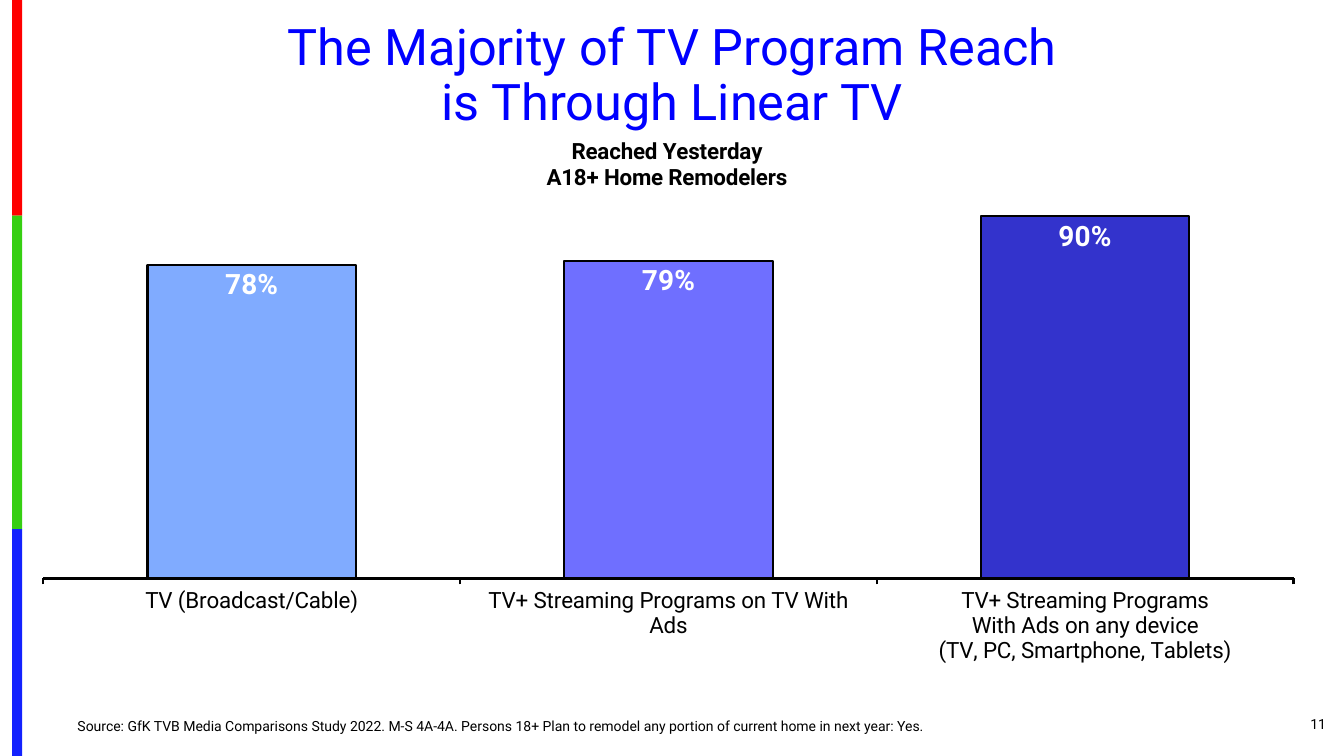
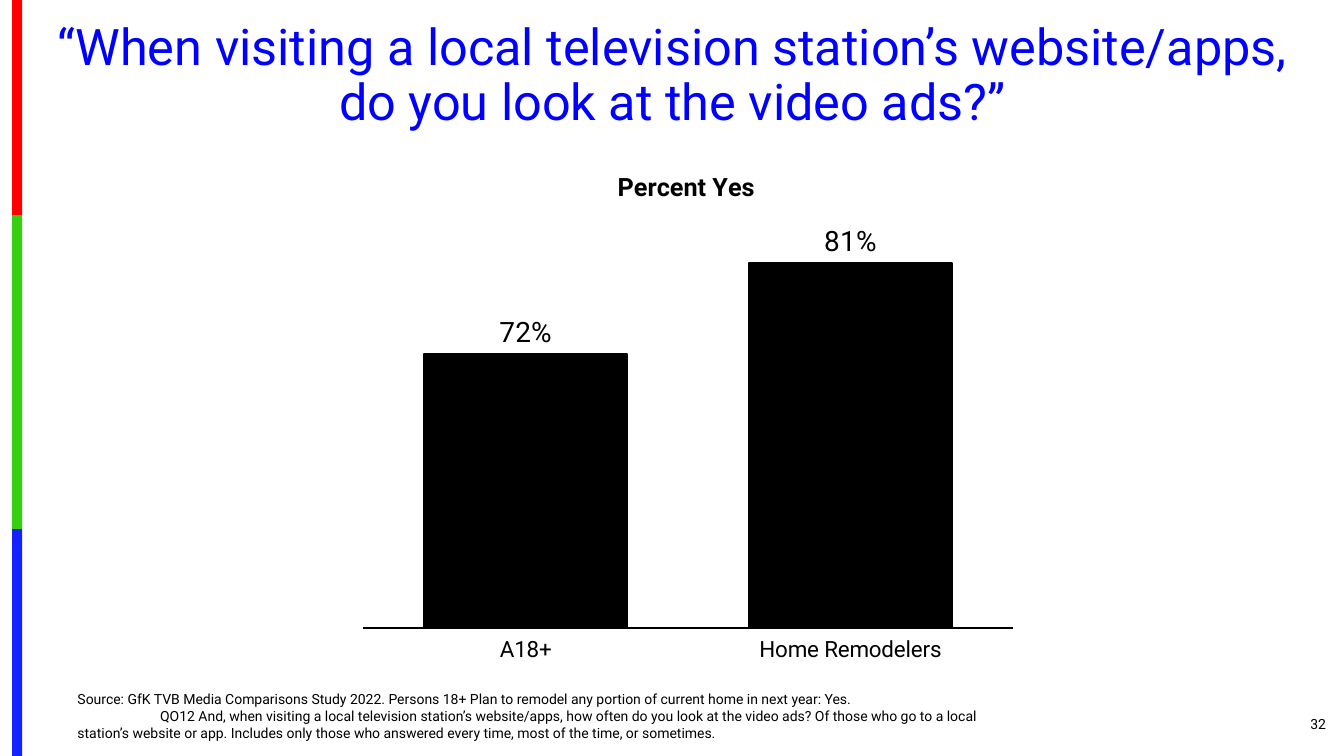
from dataclasses import dataclass

from lxml import etree
from pptx import Presentation
from pptx.chart.data import CategoryChartData
from pptx.dml.color import RGBColor
from pptx.enum.chart import XL_CHART_TYPE, XL_LABEL_POSITION, XL_TICK_LABEL_POSITION, XL_TICK_MARK
from pptx.enum.shapes import MSO_SHAPE
from pptx.enum.text import MSO_ANCHOR, PP_ALIGN
from pptx.oxml.ns import qn
from pptx.util import Inches, Pt


@dataclass(frozen=True)
class Theme:
    font: str = "Roboto"
    title: str = "0000FF"
    text: str = "000000"
    inverse: str = "FFFFFF"
    title_size: int = 36
    value_size: int = 20
    category_size: int = 16
    small_size: int = 10
    outline: float = 1.5


THEME = Theme()

# colour, top, height
STRIPES = [("FE0000", 0, 2.14), ("36CF12", 2.14, 3.11), ("1322FE", 5.25, 2.25)]

SLIDES = [
    dict(
        title="The Majority of TV Program Reach\vis Through Linear TV",
        number="11",
        source=["Source: GfK TVB Media Comparisons Study 2022. M-S 4A-4A. "
                "Persons 18+ Plan to remodel any portion of current home in next year: Yes."],
        source_box=(0.67, 7.08, 9.42, 0.25),
        chart=dict(
            box=(0.42, 1.22, 12.42, 5.87),
            title="Reached Yesterday\nA18+ Home Remodelers", title_size=16, title_at=(0.4, 0.02),
            plot=(0, 0.09, 1, 0.68),
            values={
                "TV (Broadcast/Cable)": 0.78,
                "TV+ Streaming Programs on TV With Ads": 0.79,
                "TV+ Streaming Programs\nWith Ads on any device\n(TV, PC, Smartphone, Tablets)": 0.9,
            },
            colors=["80ABFF", "6F6FFF", "3333CC"],
            scale=(0, 1), gap=100, tick=XL_TICK_MARK.OUTSIDE,
            label=dict(position=XL_LABEL_POSITION.INSIDE_END, color=THEME.inverse, bold=True),
        ),
    ),
    dict(
        title="“When visiting a local television station’s website/apps, "
              "do you look at the video ads?”",
        number="32",
        source=["Source: GfK TVB Media Comparisons Study 2022. "
                "Persons 18+ Plan to remodel any portion of current home in next year: Yes.",
                "QO12 And, when visiting a local television station’s website/apps, how often do you "
                "look at the video ads? Of those who go to a local station’s website or app. "
                "Includes only those who answered every time, most of the time, or sometimes."],
        source_box=(0.67, 6.79, 9.42, 0.61),
        chart=dict(
            box=(3.25, 1.36, 7.08, 5.73),
            title="Percent Yes", title_size=18, title_at=(0.4, 0.05),
            plot=(0.05, 0.13, 0.91, 0.72),
            values={"A18+": 0.72, "Home Remodelers": 0.81},
            colors=["000000", "000000"],
            scale=(0.45, 0.86), gap=60, tick=XL_TICK_MARK.NONE,
            label=dict(position=XL_LABEL_POSITION.OUTSIDE_END, color=THEME.text, bold=False),
        ),
    ),
]


def set_all(obj, **values):
    for name, value in values.items():
        setattr(obj, name, value)


def set_font(font, size, color=THEME.text, bold=False):
    set_all(font, name=THEME.font, size=Pt(size), bold=bold)
    font.color.rgb = RGBColor.from_string(color)


def set_outline(line):
    line.color.rgb = RGBColor.from_string(THEME.text)
    line.width = Pt(THEME.outline)


def add_text(s, box, text, size, color=THEME.text, align=PP_ALIGN.LEFT,
             anchor=MSO_ANCHOR.TOP, spacing=1.0):
    tf = s.shapes.add_textbox(*map(Inches, box)).text_frame
    set_all(tf, word_wrap=True, vertical_anchor=anchor, text=text)
    for p in tf.paragraphs:
        set_all(p, alignment=align, line_spacing=spacing)
        for r in p.runs:
            set_font(r.font, size, color)
    return tf


def add_stripes(s):
    for color, top, height in STRIPES:
        sp = s.shapes.add_shape(MSO_SHAPE.RECTANGLE, *map(Inches, (0.12, top, 0.1, height)))
        sp.shadow.inherit = False
        sp.fill.solid()
        sp.fill.fore_color.rgb = RGBColor.from_string(color)
        sp.line.fill.background()


def add_source(s, box, lines):
    tf = add_text(s, box, "\n".join(lines), THEME.small_size, anchor=MSO_ANCHOR.BOTTOM)
    for p in tf.paragraphs[1:]:
        pPr = p._p.get_or_add_pPr()
        pPr.set("marL", "0")
        pPr.set("indent", str(Inches(0.82)))


def set_layout(parent, index, **values):
    """Give a chart title or plot area a fixed place, in fractions of the chart."""
    for old in parent.findall(qn("c:layout")):
        parent.remove(old)
    layout = etree.Element(qn("c:layout"))
    manual = etree.SubElement(layout, qn("c:manualLayout"))
    for name, value in values.items():
        etree.SubElement(manual, qn(f"c:{name}")).set("val", str(value))
    parent.insert(index, layout)


def style_axes(chart, scale, tick):
    low, high = scale
    set_all(chart.value_axis, visible=False, has_major_gridlines=False,
            minimum_scale=low, maximum_scale=high)
    axis = chart.category_axis
    set_all(axis, major_tick_mark=tick, minor_tick_mark=XL_TICK_MARK.NONE,
            has_major_gridlines=False, tick_label_position=XL_TICK_LABEL_POSITION.LOW)
    set_font(axis.tick_labels.font, THEME.category_size)
    set_outline(axis.format.line)


def style_bars(plot, colors, gap, label):
    set_all(plot, gap_width=gap, vary_by_categories=False, has_data_labels=True)
    set_all(plot.data_labels, show_value=True, number_format="0%",
            number_format_is_linked=False, position=label["position"])
    set_font(plot.data_labels.font, THEME.value_size, label["color"], label["bold"])
    for i, color in enumerate(colors):
        bar = plot.series[0].points[i].format
        bar.fill.solid()
        bar.fill.fore_color.rgb = RGBColor.from_string(color)
        set_outline(bar.line)


def add_bar_chart(s, item):
    data = CategoryChartData(number_format="0%")
    data.categories = list(item["values"])
    data.add_series("Series 1", list(item["values"].values()))
    chart = s.shapes.add_chart(XL_CHART_TYPE.COLUMN_CLUSTERED,
                               *map(Inches, item["box"]), data).chart
    set_font(chart.font, THEME.small_size)
    set_all(chart, has_legend=False, has_title=True)

    tf = chart.chart_title.text_frame
    tf.text = item["title"]
    for p in tf.paragraphs:
        set_font(p.font, item["title_size"], bold=True)
        for r in p.runs:
            set_font(r.font, item["title_size"], bold=True)

    x, y = item["title_at"]
    set_layout(chart.chart_title._element, 1, xMode="edge", yMode="edge", x=x, y=y)
    x, y, w, h = item["plot"]
    plot_area = chart._chartSpace.find(".//" + qn("c:plotArea"))
    set_layout(plot_area, 0, layoutTarget="inner", xMode="edge", yMode="edge", x=x, y=y, w=w, h=h)
    style_axes(chart, item["scale"], item["tick"])
    style_bars(chart.plots[0], item["colors"], item["gap"], item["label"])


def main():
    prs = Presentation()
    set_all(prs, slide_width=Inches(13.33), slide_height=Inches(7.5))
    for item in SLIDES:
        s = prs.slides.add_slide(prs.slide_layouts[6])
        add_stripes(s)
        add_text(s, (0.46, 0.17, 12.42, 1.19), item["title"], THEME.title_size, THEME.title,
                 PP_ALIGN.CENTER, spacing=0.9)
        add_text(s, (12.17, 6.98, 1.08, 0.4), item["number"], THEME.small_size,
                 align=PP_ALIGN.RIGHT, anchor=MSO_ANCHOR.MIDDLE)
        add_source(s, item["source_box"], item["source"])
        add_bar_chart(s, item["chart"])
    prs.save("out.pptx")


if __name__ == "__main__":
    main()
